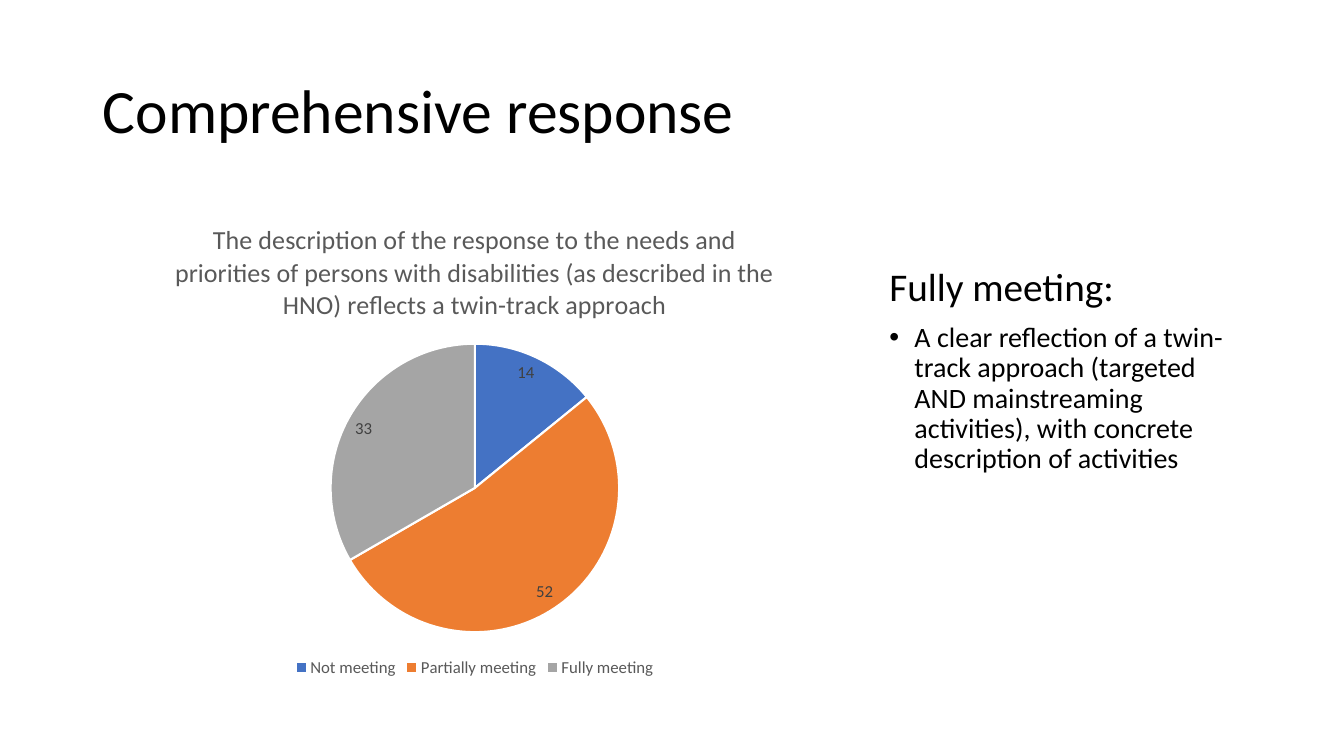
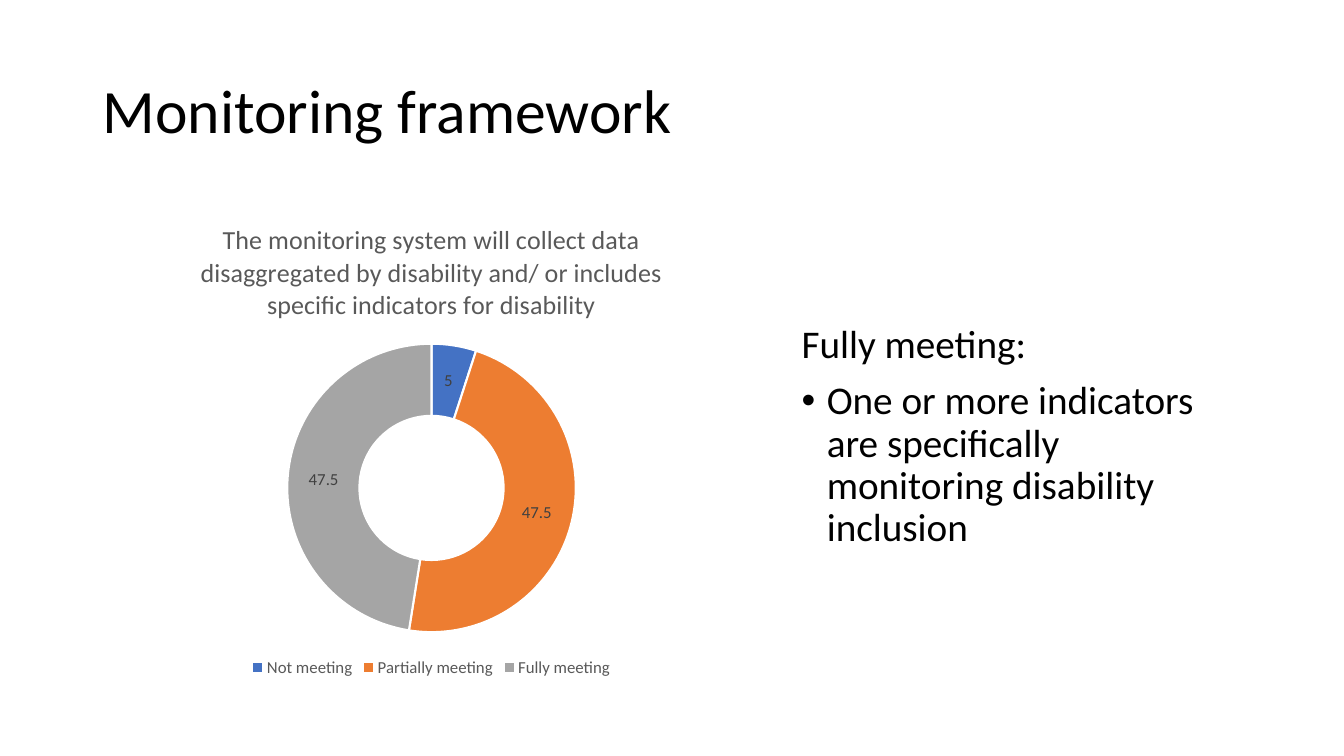
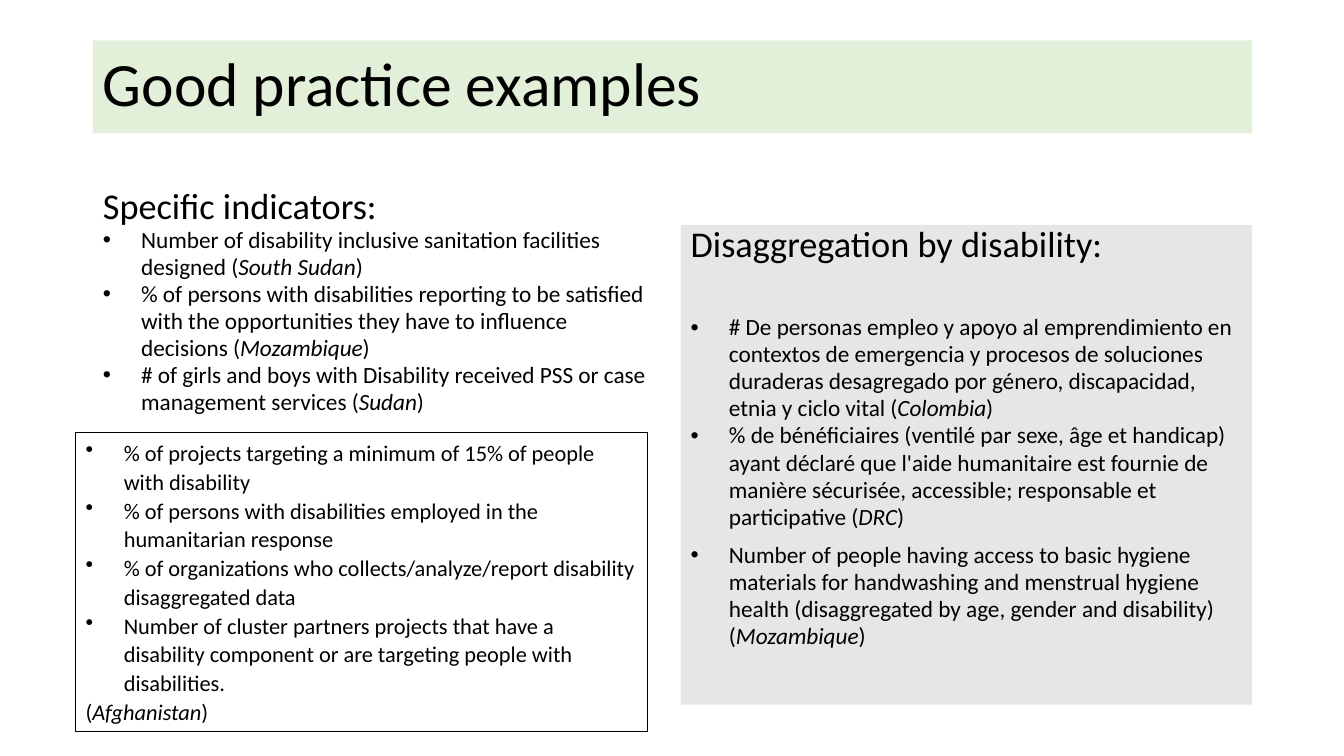
from dataclasses import dataclass, replace

from lxml import etree
from pptx import Presentation
from pptx.chart.data import CategoryChartData
from pptx.dml.color import RGBColor
from pptx.enum.chart import XL_CHART_TYPE as ChartType
from pptx.enum.chart import XL_LABEL_POSITION as LabelPosition
from pptx.enum.chart import XL_LEGEND_POSITION as LegendPosition
from pptx.enum.text import MSO_ANCHOR as Anchor
from pptx.enum.text import MSO_AUTO_SIZE as AutoSize
from pptx.enum.text import PP_ALIGN as Align
from pptx.oxml.ns import qn
from pptx.util import Inches, Pt


@dataclass(frozen=True)
class Theme:
    font: str = "Calibri"
    text: str = "000000"
    muted: str = "595959"
    label: str = "404040"
    white: str = "FFFFFF"
    title_band: str = "E2F0D9"
    panel: str = "E7E6E6"
    slices: tuple = ("4472C4", "ED7D31", "A5A5A5")
    title_size: float = 44
    chart_title_size: float = 18.6
    chart_size: float = 10
    chart_label_size: float = 12


@dataclass(frozen=True)
class ParaStyle:
    size: float
    spacing: float
    before: float = 0
    after: float = 0
    indent: float = 0


THEME = Theme()
LEFT = 0.92
CONTENT_TOP = 2
CONTENT_HEIGHT = 4.76
COLUMN_WIDTH = 5.67
TITLE_AT = (LEFT, 0.4, 11.5, 1.45)
BAND_AT = (LEFT, 0.4, 11.5, 0.92)

LEAD = ParaStyle(28, 0.9, before=10)
LARGE_BULLET = replace(LEAD, indent=0.25)
SMALL_BULLET = replace(LARGE_BULLET, size=20)
HEADING = ParaStyle(25.9, 0.8, before=10)
SPACED_HEADING = replace(HEADING, after=35.3)
EXAMPLE = ParaStyle(16.6, 0.97, indent=0.38)
SPACED_EXAMPLE = replace(EXAMPLE, after=8)
BOX_BULLET = ParaStyle(16, 1.07, indent=0.38)
BOX_NOTE = replace(BOX_BULLET, indent=0)

RATINGS = ("Not meeting", "Partially meeting", "Fully meeting")


def rgb(value):
    return RGBColor.from_string(value)


def place(shape, at):
    shape.left, shape.top, shape.width, shape.height = map(Inches, at)


def fill_solid(target, color):
    target.fill.solid()
    target.fill.fore_color.rgb = rgb(color)


def set_font(font, size, color):
    font.name = THEME.font
    font.size = Pt(size)
    font.bold = False
    font.color.rgb = rgb(color)


def set_bullet(para, indent):
    properties = para._p.get_or_add_pPr()
    properties.set("marL", str(Inches(indent)))
    properties.set("indent", str(-Inches(indent)))
    bullet = etree.Element(qn("a:buChar" if indent else "a:buNone"))
    if indent:
        bullet.set("char", "•")
    properties.insert_element_before(bullet, "a:tabLst", "a:defRPr", "a:extLst")


def write_para(para, style, text, country=""):
    para.alignment = Align.LEFT
    para.line_spacing = style.spacing
    para.space_before = Pt(style.before)
    para.space_after = Pt(style.after)
    set_font(para.font, style.size, THEME.text)
    set_bullet(para, style.indent)
    if not country:
        para.add_run().text = text
        return
    para.add_run().text = f"{text} (".lstrip()
    name = para.add_run()
    name.text = country
    name.font.italic = True
    para.add_run().text = ")"


def write_text(frame, paras):
    frame.word_wrap = True
    frame.auto_size = AutoSize.NONE
    for number, content in enumerate(paras):
        para = frame.add_paragraph() if number else frame.paragraphs[0]
        write_para(para, *content)


def add_page(deck, layout, title, at=TITLE_AT):
    page = deck.slides.add_slide(deck.slide_layouts.get_by_name(layout))
    heading = page.shapes.title
    place(heading, at)
    write_text(heading.text_frame, [(ParaStyle(THEME.title_size, 0.9), title)])
    heading.text_frame.vertical_anchor = Anchor.MIDDLE
    return page


def fill_body(page, index, at, paras, top_inset=0.05):
    body = page.placeholders[index]
    place(body, at)
    write_text(body.text_frame, paras)
    body.text_frame.vertical_anchor = Anchor.TOP
    body.text_frame.margin_top = Inches(top_inset)
    return body


def add_rating_chart(page, kind, width, title, values):
    data = CategoryChartData()
    data.categories = RATINGS
    data.add_series(title, values)
    at = map(Inches, (LEFT, CONTENT_TOP, width, CONTENT_HEIGHT))
    chart = page.shapes.add_chart(kind, *at, data).chart
    set_font(chart.font, THEME.chart_size, THEME.text)

    chart.has_title = True
    chart.chart_title.include_in_layout = False
    chart.chart_title.text_frame.text = title
    title_font = chart.chart_title.text_frame.paragraphs[0].font
    set_font(title_font, THEME.chart_title_size, THEME.muted)

    chart.has_legend = True
    chart.legend.position = LegendPosition.BOTTOM
    chart.legend.include_in_layout = False
    set_font(chart.legend.font, THEME.chart_label_size, THEME.muted)

    plot = chart.plots[0]
    plot.vary_by_categories = True
    series = plot.series[0]
    for number, color in enumerate(THEME.slices):
        area = series.points[number].format
        fill_solid(area, color)
        area.line.color.rgb = rgb(THEME.white)
        area.line.width = Pt(1.5)

    labels = series.data_labels
    labels.show_value = True
    labels.show_percentage = False
    set_font(labels.font, THEME.chart_label_size, THEME.label)
    if kind == ChartType.PIE:
        labels.position = LabelPosition.INSIDE_END
    for hole in chart._chartSpace.iter(qn("c:holeSize")):
        hole.set("val", "75")


def add_outlined_box(page, at, paras):
    box = page.shapes.add_textbox(*map(Inches, at))
    box.line.color.rgb = rgb(THEME.text)
    box.line.width = Pt(0.75)
    write_text(box.text_frame, paras)


def build_response_page(deck):
    page = add_page(deck, "Title and Content", "Comprehensive response")
    add_rating_chart(
        page, ChartType.PIE, 7.58,
        "The description of the response to the needs and priorities of persons "
        "with disabilities (as described in the HNO) reflects a twin-track approach",
        (14, 52, 33),
    )
    fill_body(page, 1, (8.72, CONTENT_TOP, 3.69, CONTENT_HEIGHT), [
        (LEAD, "Fully meeting:"),
        (SMALL_BULLET, "A clear reflection of a twin-track approach (targeted AND "
         "mainstreaming activities), with concrete description of activities"),
    ], top_inset=0.65)


def build_monitoring_page(deck):
    page = add_page(deck, "Title and Content", "Monitoring framework")
    add_rating_chart(
        page, ChartType.DOUGHNUT, 6.72,
        "The monitoring system will collect data disaggregated by disability "
        "and/ or includes specific indicators for disability",
        (5, 47.5, 47.5),
    )
    fill_body(page, 1, (7.85, CONTENT_TOP, 4.57, CONTENT_HEIGHT), [
        (LEAD, "Fully meeting:"),
        (LARGE_BULLET, "One or more indicators are specifically monitoring "
         "disability inclusion"),
    ], top_inset=1.22)


def build_examples_page(deck):
    page = add_page(deck, "Two Content", "Good practice examples", BAND_AT)
    fill_solid(page.shapes.title, THEME.title_band)
    fill_body(page, 1, (LEFT, 1.85, COLUMN_WIDTH, 5.51), [
        (HEADING, "Specific indicators:"),
        (EXAMPLE, "Number of disability inclusive sanitation facilities designed",
         "South Sudan"),
        (EXAMPLE, "% of persons with disabilities reporting to be satisfied with "
         "the opportunities they have to influence decisions", "Mozambique"),
        (SPACED_EXAMPLE, "# of girls and boys with Disability received PSS or case "
         "management services", "Sudan"),
    ])
    panel = fill_body(page, 2, (6.75, 2.23, COLUMN_WIDTH, CONTENT_HEIGHT), [
        (SPACED_HEADING, "Disaggregation by disability:"),
        (EXAMPLE, "# De personas empleo y apoyo al emprendimiento en contextos de "
         "emergencia y procesos de soluciones duraderas desagregado por género, "
         "discapacidad, etnia y ciclo vital", "Colombia"),
        (SPACED_EXAMPLE, "% de bénéficiaires (ventilé par sexe, âge et handicap) "
         "ayant déclaré que l'aide humanitaire est fournie de manière sécurisée, "
         "accessible; responsable et participative", "DRC"),
        (SPACED_EXAMPLE, "Number of people having access to basic hygiene materials "
         "for handwashing and menstrual hygiene health (disaggregated by age, "
         "gender and disability)", "Mozambique"),
    ])
    fill_solid(panel, THEME.panel)
    add_outlined_box(page, (0.75, 4.29, COLUMN_WIDTH, 2.97), [
        (BOX_BULLET, "% of projects targeting a minimum of 15% of people with "
         "disability"),
        (BOX_BULLET, "% of persons with disabilities employed in the humanitarian "
         "response"),
        (BOX_BULLET, "% of organizations who collects/analyze/report disability "
         "disaggregated data"),
        (BOX_BULLET, "Number of cluster partners projects that have a disability "
         "component or are targeting people with disabilities."),
        (BOX_NOTE, "", "Afghanistan"),
    ])


def main():
    deck = Presentation()
    deck.slide_width = Inches(13.33)
    deck.slide_height = Inches(7.5)
    build_response_page(deck)
    build_monitoring_page(deck)
    build_examples_page(deck)
    deck.save("out.pptx")


if __name__ == "__main__":
    main()
